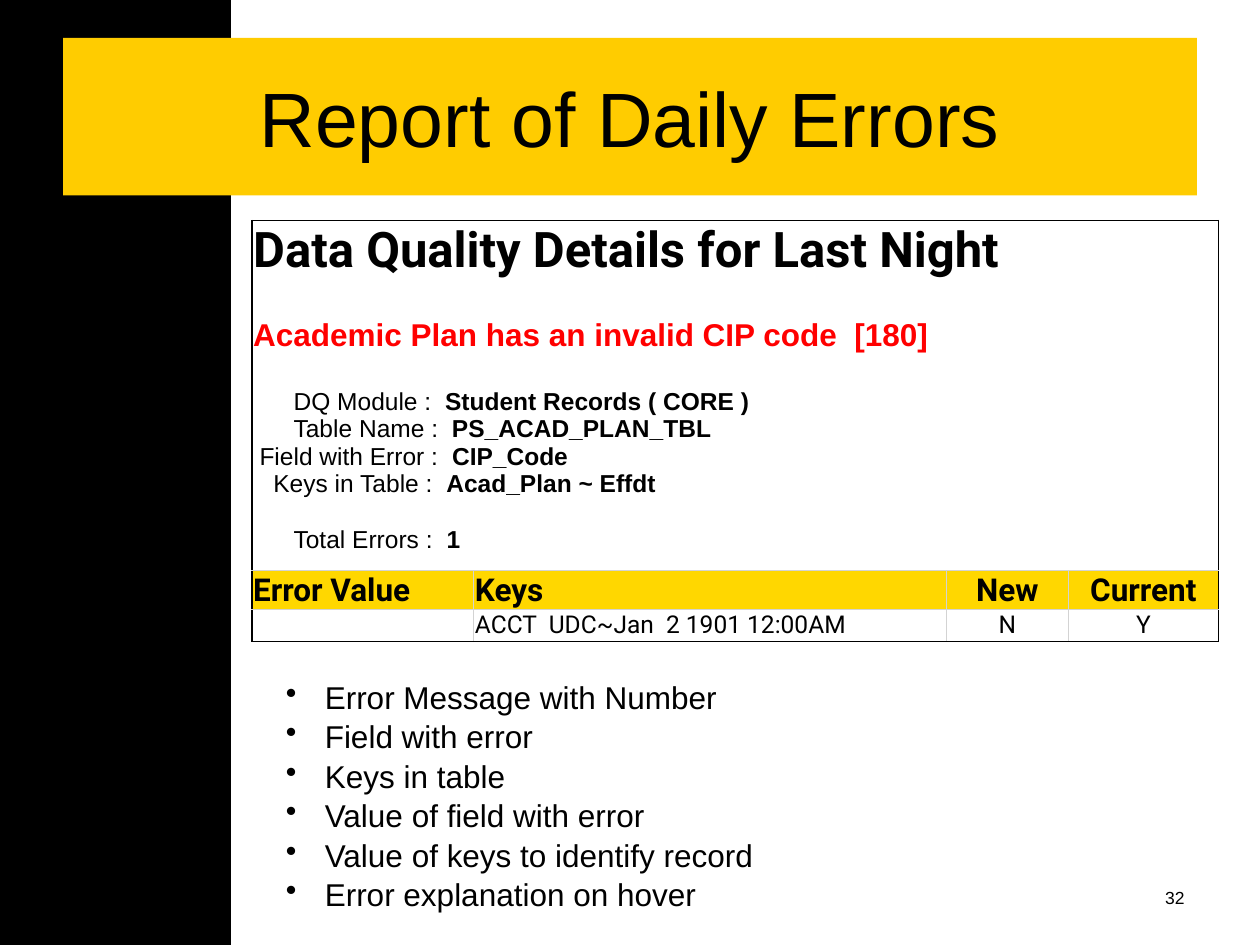
from dataclasses import dataclass

from lxml import etree
from pptx import Presentation
from pptx import util as u
from pptx.dml.color import RGBColor
from pptx.enum import shapes, text
from pptx.oxml.ns import qn

PX = 9144


def px(length):
    return u.Emu(length * PX)


@dataclass(frozen=True)
class Theme:
    sans: str = "Arial"
    display: str = "Roboto"
    black: str = "000000"
    banner: str = "FFCC00"
    header: str = "FFD700"
    alert: str = "FF0000"
    grid: str = "D3D3D3"
    title: int = 44
    heading: int = 28
    body: int = 18
    detail: int = 14
    footer: int = 10
    spacer: int = 8


class SlideBuilder:
    def __init__(self, slide, theme):
        self.slide = slide
        self.theme = theme

    def run(self, paragraph, words, size, font=None, color=None, bold=False):
        piece = paragraph.add_run()
        piece.text = words
        piece.font.size = u.Pt(size)
        piece.font.name = font or self.theme.sans
        piece.font.bold = bold
        piece.font.color.rgb = RGBColor.from_string(color or self.theme.black)

    def place(self, item, left, top, width, height):
        item.left, item.top = px(left), px(top)
        item.width, item.height = px(width), px(height)

    def paint(self, item, color):
        item.fill.solid()
        item.fill.fore_color.rgb = RGBColor.from_string(color)

    def side_bar(self, *box):
        bar = self.slide.shapes.add_shape(shapes.MSO_SHAPE.RECTANGLE, *map(px, box))
        bar.shadow.inherit = False
        self.paint(bar, self.theme.black)
        bar.line.color.rgb = RGBColor.from_string(self.theme.black)
        bar.line.width = u.Pt(0.75)
        self.slide.shapes.element.insert(2, bar.element)

    def title(self, words, *box):
        banner = self.slide.shapes.title
        self.place(banner, *box)
        self.paint(banner, self.theme.banner)
        banner.text_frame.vertical_anchor = text.MSO_ANCHOR.MIDDLE
        heading = banner.text_frame.paragraphs[0]
        heading.alignment = text.PP_ALIGN.CENTER
        self.run(heading, words, self.theme.title)

    def text_frame(self, *box):
        frame = self.slide.shapes.add_textbox(*map(px, box)).text_frame
        frame.word_wrap = True
        return frame

    def page_number(self, number, *box):
        frame = self.text_frame(*box)
        frame.margin_top = px(21)
        paragraph = frame.paragraphs[0]
        paragraph.alignment = text.PP_ALIGN.RIGHT
        self.run(paragraph, number, self.theme.footer)

    def next_paragraph(self, frame, index):
        return frame.add_paragraph() if index else frame.paragraphs[0]

    def indent(self, paragraph, left, first=0):
        properties = paragraph._p.get_or_add_pPr()
        properties.set("marL", str(px(left)))
        properties.set("indent", str(px(first)))
        return properties

    def bullets(self, points, *box):
        frame = self.text_frame(*box)
        for index, point in enumerate(points):
            paragraph = self.next_paragraph(frame, index)
            properties = self.indent(paragraph, 31, -31)
            etree.SubElement(properties, qn("a:buChar"), char="•")
            paragraph.space_after = u.Pt(1)
            self.run(paragraph, point, self.theme.body)

    def border(self, cell, side, color, width):
        properties = cell._tc.get_or_add_tcPr()
        line = etree.SubElement(properties, qn(f"a:ln{side}"), w=str(u.Pt(width)))
        if color is None:
            etree.SubElement(line, qn("a:noFill"))
        else:
            fill = etree.SubElement(line, qn("a:solidFill"))
            etree.SubElement(fill, qn("a:srgbClr"), val=color)

    def table(self, columns, rows, left, top):
        frame = self.slide.shapes.add_table(
            len(rows), len(columns), px(left), px(top), px(sum(columns)), px(sum(rows)))
        table = frame.table
        table.first_row = table.horz_banding = False
        style = table._tbl.tblPr.find(qn("a:tableStyleId"))
        style.text = "{2D5ABB26-0587-4C30-8999-92F81FD0307C}"
        for column, width in zip(table.columns, columns):
            column.width = px(width)
        for row, height in zip(table.rows, rows):
            row.height = px(height)
        return table

    def frame_cell(self, cell, outer, inner, fill=None):
        cell.margin_left = cell.margin_right = cell.margin_top = px(1)
        cell.margin_bottom = 0
        for side in "LRTB":
            if side in outer:
                self.border(cell, side, self.theme.black, 1)
            elif side in inner:
                self.border(cell, side, self.theme.grid, 0.5)
            else:
                self.border(cell, side, None, 0.5)
        if fill:
            self.paint(cell, fill)
        else:
            cell.fill.background()

    def cell_text(self, cell, words, size, bold, centered=False):
        paragraph = cell.text_frame.paragraphs[0]
        if centered:
            paragraph.alignment = text.PP_ALIGN.CENTER
        if words:
            self.run(paragraph, words, size, self.theme.display, bold=bold)
        else:
            etree.SubElement(paragraph._p, qn("a:endParaRPr"),
                             sz=str(u.Pt(self.theme.spacer).centipoints))

    def error_report(self, table, heading, message, details, header, record):
        theme = self.theme
        last_row, last_column = len(table.rows) - 1, len(table.columns) - 1
        header_row, detail_row = last_row - 1, last_row - 2
        merged = (0, detail_row)
        for r in range(last_row + 1):
            for c in range(last_column + 1):
                spans = r in merged and c == 0
                outer = ("L" * (c == 0) + "R" * (c == last_column or spans)
                         + "T" * (r == 0) + "B" * (r == last_row))
                inner = "LRTB" if r >= header_row else "B" * (r == detail_row)
                fill = theme.header if r == header_row else None
                self.frame_cell(table.cell(r, c), outer, inner, fill)
        for r in merged:
            table.cell(r, 0).merge(table.cell(r, last_column))
        self.cell_text(table.cell(0, 0), heading, theme.heading, True)
        for c in range(last_column + 1):
            centered = c > 1
            self.cell_text(table.cell(1, c), "", theme.spacer, False)
            self.cell_text(table.cell(header_row, c), header[c], theme.body, True, centered)
            self.cell_text(table.cell(last_row, c), record[c], theme.detail, False, centered)
        frame = table.cell(detail_row, 0).text_frame
        self.run(frame.paragraphs[0], message, theme.body, color=theme.alert, bold=True)
        for left, gap, label, value in details:
            paragraph = frame.add_paragraph()
            self.indent(paragraph, left)
            paragraph.space_before = u.Pt(gap)
            self.run(paragraph, label, theme.detail)
            self.run(paragraph, value, theme.detail, bold=True)


def main():
    deck = Presentation()
    deck.slide_width, deck.slide_height = px(1000), px(750)
    builder = SlideBuilder(deck.slides.add_slide(deck.slide_layouts[5]), Theme())
    builder.side_bar(0, 0, 183, 750)
    builder.title("Report of Daily Errors", 50, 30, 900, 125)
    builder.page_number("32", 717, 683, 233, 52)
    builder.bullets(
        ["Error Message with Number", "Field with error", "Keys in table",
         "Value of field with error", "Value of keys to identify record",
         "Error explanation on hover"], 217, 533, 733, 192)
    report = builder.table([176, 375, 97, 119], [51, 25, 202, 31, 25], 200, 175)
    builder.error_report(
        report, "Data Quality Details for Last Night",
        "Academic Plan has an invalid CIP code  [180]",
        [(32, 20, "DQ Module :  ", "Student Records ( CORE )"),
         (32, 0, "Table Name :  ", "PS_ACAD_PLAN_TBL"),
         (5, 0, "Field with Error :  ", "CIP_Code"),
         (16, 0, "Keys in Table :  ", "Acad_Plan ~ Effdt"),
         (32, 16, "Total Errors :  ", "1")],
        ["Error Value", "Keys", "New", "Current"],
        ["", "ACCT  UDC~Jan  2 1901 12:00AM", "N", "Y"])
    deck.save("out.pptx")


if __name__ == "__main__":
    main()
